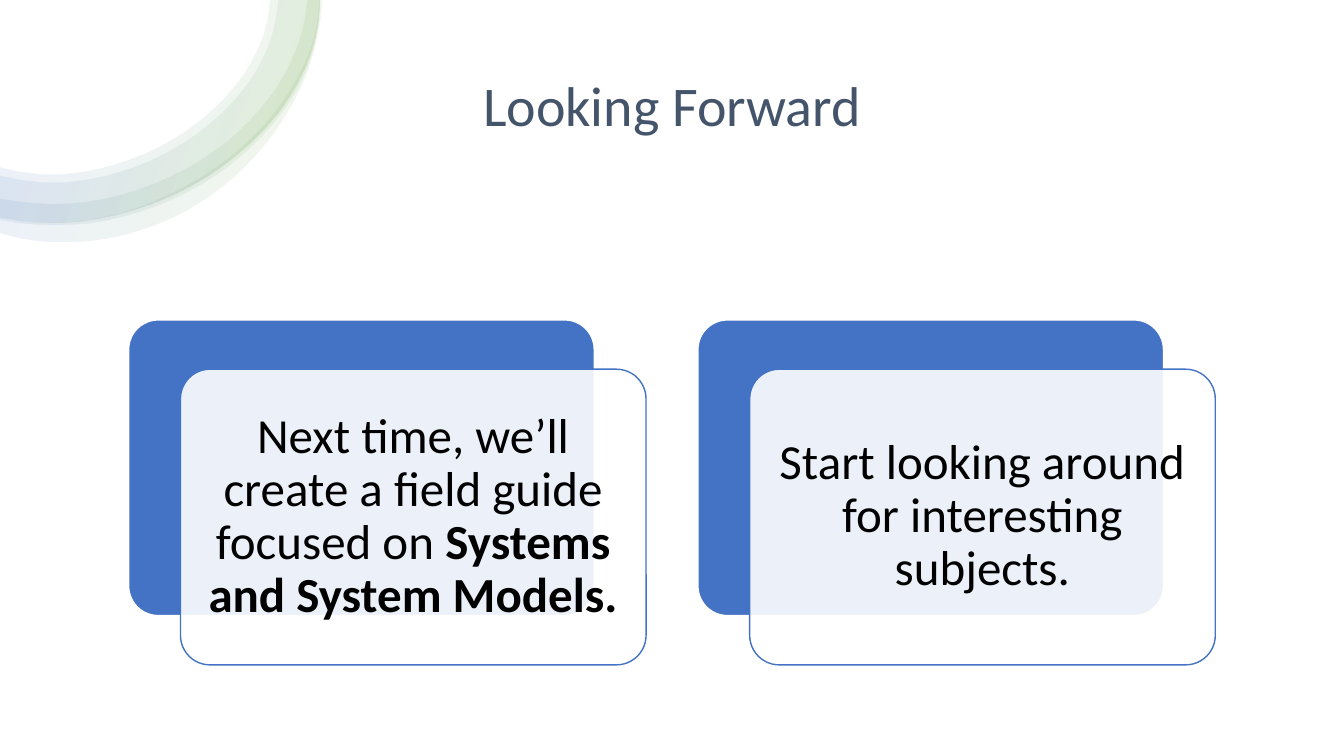
import math

import lxml.etree
import pptx
import pptx.dml.color
import pptx.enum.shapes
import pptx.enum.text
import pptx.oxml.ns
import pptx.util

Pt = pptx.util.Pt
SHAPES = pptx.enum.shapes.MSO_SHAPE
FONT = "Calibri"
BLUE, GREEN, WHITE = "4472C4", "70AD47", "FFFFFF"

# Edges of the corner arcs in points, each running from the top to the left
OUTER_RIM = [(228, 0), (219.8, 42.8), (205.6, 70.4), (161.1, 116.8),
             (101.7, 147.8), (35.3, 159.1), (0, 155.5)]
ARC_BANDS = [
    (OUTER_RIM,
     [(192.2, 0), (187.3, 26.2), (179.3, 43.9), (144, 85),
      (92.9, 113.8), (35.3, 124.6), (0, 119.5)]),
    (OUTER_RIM,
     [(198, 0), (193, 27.6), (185, 46.1), (148.3, 89.3),
      (95, 119.5), (35.3, 130.3), (0, 125.3)]),
    ([(228.2, 0), (225.4, 27.4), (215.3, 56.9), (177.1, 106.6),
      (123.1, 141.8), (60.5, 159.1), (27.4, 159.8), (0, 156.2)],
     [(218.9, 0), (214.6, 25.2), (203.8, 51.1), (167, 96.5),
      (115.9, 128.2), (58.3, 144), (28.1, 144.7), (0, 141.1)]),
    ([(229.7, 0), (224.8, 32.3), (217.4, 55.4), (202.3, 84.2), (170.6, 122.4),
      (128.9, 151.9), (61.9, 171.4), (27.4, 171.4), (0, 165.6)],
     [(227.5, 0), (224.6, 23.8), (213.1, 53.3), (195.8, 79.9), (174.2, 103),
      (149, 122.4), (121, 138.2), (75.6, 154.1), (28.1, 158.4), (0, 155.5)]),
]
ARC_STOPS = [(2, WHITE), (16, GREEN), (85, BLUE), (100, WHITE)]

# Each card is a list of (text, bold) runs
CARDS = [
    [("Next time, we’ll create a field guide focused on ", False),
     ("Systems and System Models. ", True)],
    [("Start looking around for interesting subjects.", False)],
]


def color(hex_string):
    return pptx.dml.color.RGBColor.from_string(hex_string)


def add_element(parent, tag, **attributes):
    return lxml.etree.SubElement(parent, pptx.oxml.ns.qn(tag), attributes)


def curve_segments(points):
    """Cubic segments of a smooth curve: two control points and an end each."""
    chords = [math.dist(a, b) for a, b in zip(points, points[1:])]
    units = [((b[0] - a[0]) / chord, (b[1] - a[1]) / chord)
             for a, b, chord in zip(points, points[1:], chords)]
    tangents = [tuple((u * after + v * before) / (before + after) for u, v in zip(*pair))
                for *pair, before, after in zip(units, units[1:], chords, chords[1:])]
    first = tuple(2 * u - t for u, t in zip(units[0], tangents[0]))
    last = tuple(2 * u - t for u, t in zip(units[-1], tangents[-1]))
    tangents = [first, *tangents, last]
    return [
        (tuple(p + t * chord / 3 for p, t in zip(start, leaving)),
         tuple(p - t * chord / 3 for p, t in zip(end, arriving)),
         end)
        for start, end, leaving, arriving, chord
        in zip(points, points[1:], tangents, tangents[1:], chords)]


def add_corner_arcs(slide, left, top):
    for outer, inner in ARC_BANDS:
        inner = inner[::-1]
        corners = [(Pt(left + x), Pt(top + y)) for x, y in outer + inner]
        builder = slide.shapes.build_freeform(*corners[0])
        builder.add_line_segments(corners[1:], close=True)
        band = builder.convert_to_shape()
        band.shadow.inherit = False
        band.line.fill.background()

        # Bend both edges, leaving the straight ends as they are
        geometry = band.element.spPr.find(pptx.oxml.ns.qn("a:custGeom"))
        lines = list(geometry.iter(pptx.oxml.ns.qn("a:lnTo")))
        segments = [*curve_segments(outer), None, *curve_segments(inner)]
        for line, segment in zip(lines, segments):
            if segment:
                curve = lxml.etree.Element(pptx.oxml.ns.qn("a:cubicBezTo"))
                for x, y in segment:
                    add_element(curve, "a:pt", x=str(int(Pt(x))), y=str(int(Pt(y))))
                line.getparent().replace(line, curve)

        # Translucent gradient
        gradient = lxml.etree.Element(pptx.oxml.ns.qn("a:gradFill"))
        stops = add_element(gradient, "a:gsLst")
        for position, hex_string in ARC_STOPS:
            stop = add_element(stops, "a:gs", pos=str(position * 1000))
            stop_color = add_element(stop, "a:srgbClr", val=hex_string)
            add_element(stop_color, "a:alpha", val="10000")
        add_element(gradient, "a:lin", ang="12000000", scaled="0")
        geometry.addnext(gradient)


def add_shape(slide, kind, left, top, width, height, fill):
    shape = slide.shapes.add_shape(kind, Pt(left), Pt(top), Pt(width), Pt(height))
    shape.shadow.inherit = False
    shape.fill.solid()
    shape.fill.fore_color.rgb = color(fill)
    shape.line.fill.background()
    return shape


def add_text(slide, runs, left, top, width, height, size, hex_string):
    box = slide.shapes.add_textbox(Pt(left), Pt(top), Pt(width), Pt(height))
    frame = box.text_frame
    frame.word_wrap = True
    frame.vertical_anchor = pptx.enum.text.MSO_ANCHOR.MIDDLE
    paragraph = frame.paragraphs[0]
    paragraph.alignment = pptx.enum.text.PP_ALIGN.CENTER
    paragraph.line_spacing = 0.9
    paragraph.font.name = FONT
    paragraph.font.size = Pt(size)
    paragraph.font.color.rgb = color(hex_string)
    for text, bold in runs:
        run = paragraph.add_run()
        run.text = text
        if bold:
            run.font.bold = True
    return frame


def add_panel(slide, left, top, width, height, fill, line):
    panel = add_shape(slide, SHAPES.ROUNDED_RECTANGLE, left, top, width, height, fill)
    panel.adjustments[0] = 0.1
    panel.line.color.rgb = color(line)
    panel.line.width = Pt(1)
    return panel


def add_card(slide, runs, left, top, width, height):
    shift_x, shift_y = 37, 35.2
    panel_width, panel_height = width - shift_x, height - shift_y
    add_panel(slide, left, top, panel_width, panel_height, BLUE, WHITE)
    left, top = left + shift_x, top + shift_y
    front = add_panel(slide, left, top, panel_width, panel_height, WHITE, BLUE)
    front_color = next(front.element.spPr.iter(pptx.oxml.ns.qn("a:srgbClr")))
    add_element(front_color, "a:alpha", val="90000")

    # Card text, clear of the rounded corners
    inset = 6.2
    frame = add_text(slide, runs, left + inset, top + inset,
                     panel_width - 2 * inset, panel_height - 2 * inset, 35, "000000")
    frame.margin_left = frame.margin_right = Pt(10.5)
    frame.margin_top = frame.margin_bottom = Pt(10.5)


def add_cards(slide, left, top, width, height):
    gap = 37
    card_width = (width - gap * (len(CARDS) - 1)) / len(CARDS)
    for index, runs in enumerate(CARDS):
        add_card(slide, runs, left + index * (card_width + gap), top, card_width, height)


def main():
    presentation = pptx.Presentation()
    presentation.slide_width = Pt(960)
    presentation.slide_height = Pt(540)
    slide = presentation.slides.add_slide(presentation.slide_layouts[6])
    add_shape(slide, SHAPES.RECTANGLE, 0, 0, 960, 540, WHITE)
    add_text(slide, [("Looking Forward", False)], 92.9, 25.2, 774, 104.4, 40, "44546A")
    add_corner_arcs(slide, 0, 0)
    add_cards(slide, 91.9, 228.5, 776.2, 246.4)
    presentation.save("out.pptx")


if __name__ == "__main__":
    main()
